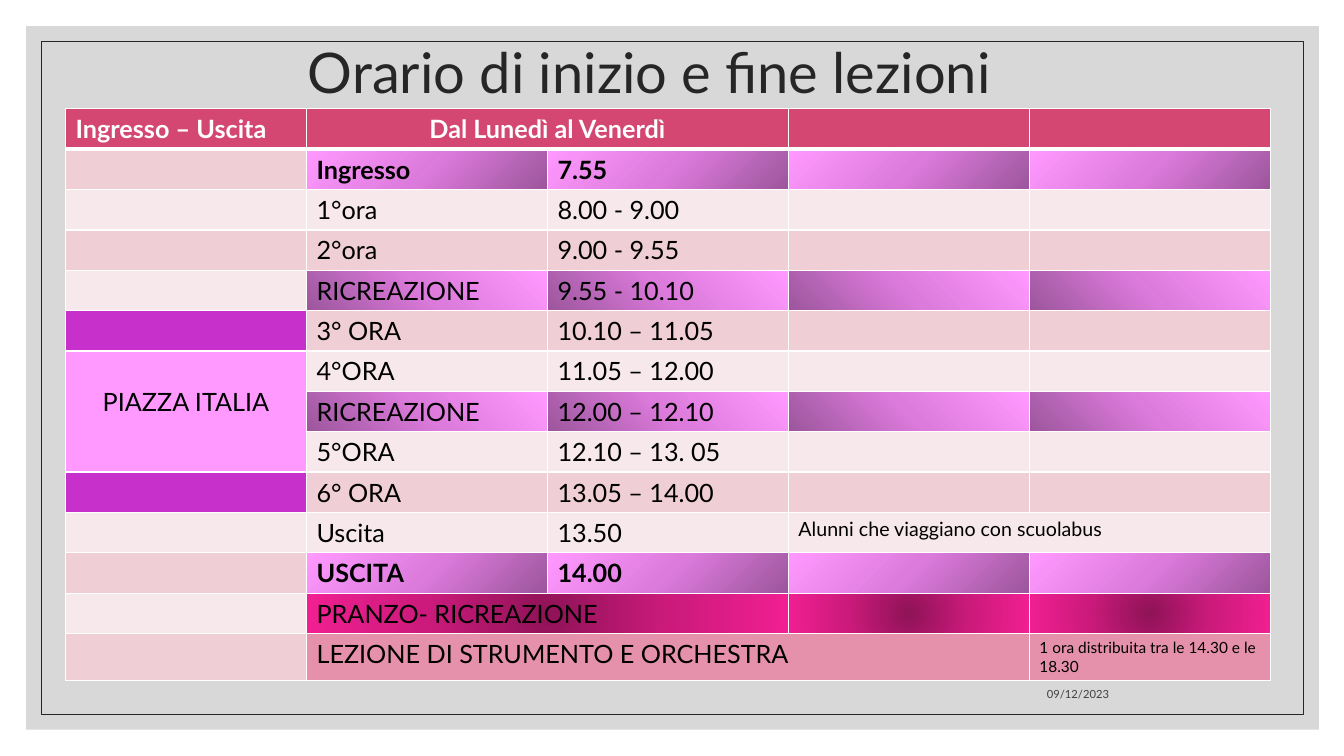
"""Build the school timetable slide with lesson start and end times."""
from lxml import etree
from pptx import Presentation
from pptx.dml.color import RGBColor
from pptx.enum.shapes import MSO_SHAPE
from pptx.enum.text import MSO_ANCHOR, PP_ALIGN
from pptx.oxml import parse_xml
from pptx.oxml.ns import qn
from pptx.util import Inches, Pt

RECTANGLE = MSO_SHAPE.RECTANGLE
LEFT, CENTER, RIGHT = PP_ALIGN.LEFT, PP_ALIGN.CENTER, PP_ALIGN.RIGHT
MIDDLE, BOTTOM = MSO_ANCHOR.MIDDLE, MSO_ANCHOR.BOTTOM
NAMESPACE = "http://schemas.openxmlformats.org/drawingml/2006/main"
FONT = "Lato"
BANDS = ["F7E9EB", "EFCFD5"]
HEADER, LESSON, VIOLET, PINK = "D54773", "E691AB", "C830CC", "FF99FF"
ORCHID = ["9C569C", "DD7BDD", "FF99FF"]
MAGENTA = ["8F1357", "CB1A7B", "F11F92"]


def color(value):
    return RGBColor.from_string(value)


def write(frame, text, size, tint, align=LEFT, bold=False):
    para = frame.paragraphs[0]
    para.text = text
    para.alignment = align
    para.font.name = FONT
    para.font.size = Pt(size)
    para.font.bold = bold
    para.font.color.rgb = color(tint)
    return para


deck = Presentation()
deck.slide_width, deck.slide_height = Inches(13.33), Inches(7.5)
page = deck.slides.add_slide(deck.slide_layouts[6])

panel = page.shapes.add_shape(RECTANGLE, Inches(0.26), Inches(0.26), Inches(12.82), Inches(6.98))
panel.shadow.inherit = False
panel.fill.solid()
panel.fill.fore_color.rgb = color("BFBFBF")
panel.line.fill.background()
panel_color = panel._element.spPr.find(qn("a:solidFill"))[0]
etree.SubElement(panel_color, qn("a:alpha"), val="60000")

frame_line = page.shapes.add_shape(RECTANGLE, Inches(0.41), Inches(0.41), Inches(12.52), Inches(6.68))
frame_line.shadow.inherit = False
frame_line.fill.background()
frame_line.line.color.rgb = color("262626")
frame_line.line.width = Pt(0.5)

title = page.shapes.add_textbox(Inches(0.94), Inches(0), Inches(11), Inches(1.5)).text_frame
title.word_wrap = True
title.vertical_anchor = MIDDLE
write(title, "Orario di inizio e fine lezioni", 40, "262626", CENTER).line_spacing = 0.9

date = page.shapes.add_textbox(Inches(7.94), Inches(6.6), Inches(3.16), Inches(0.4)).text_frame
date.word_wrap = True
date.vertical_anchor = BOTTOM
write(date, "09/12/2023", 8, "404040", RIGHT)

entries = [
    ["Ingresso – Uscita", "Dal Lunedì al Venerdì"],
    ["", "Ingresso", "7.55"],
    ["", "1°ora", "8.00 - 9.00"],
    ["", "2°ora", "9.00 - 9.55"],
    ["", "RICREAZIONE", "9.55 - 10.10"],
    ["", "3° ORA", "10.10 – 11.05"],
    ["PIAZZA ITALIA", "4°ORA", "11.05 – 12.00"],
    ["", "RICREAZIONE", "12.00 – 12.10"],
    ["", "5°ORA", "12.10 – 13. 05"],
    ["", "6° ORA", "13.05 – 14.00"],
    ["", "Uscita", "13.50", "Alunni che viaggiano con scuolabus"],
    ["", "USCITA", "14.00"],
    ["", "PRANZO- RICREAZIONE"],
    ["", "LEZIONE DI STRUMENTO E ORCHESTRA", "", "", "1 ora distribuita tra le 14.30 e le 18.30"],
]
first_fills = {0: HEADER, 5: VIOLET, 6: PINK, 7: PINK, 8: PINK, 9: VIOLET}
row_fills = {0: HEADER, 13: LESSON}
linear = '<a:lin ang="{}" scaled="0"/>'
radial = '<a:path path="circle"><a:fillToRect l="{}" t="{}" r="{}" b="{}"/></a:path>'
gradients = {
    1: (ORCHID, linear.format(225 * 60000)),
    4: (ORCHID, radial.format(0, 100000, 100000, 0)),
    7: (ORCHID, linear.format(315 * 60000)),
    11: (ORCHID, radial.format(100000, 100000, 0, 0)),
    12: (MAGENTA, radial.format(50000, 50000, 50000, 50000)),
}
sizes = {(10, 3): 14, (13, 4): 11}
centered = [(0, 1), (6, 0)]
bold_rows = [0, 1, 11]
merges = [(0, 1, 0, 2), (6, 0, 8, 0), (10, 3, 10, 4), (12, 1, 12, 2), (13, 1, 13, 3)]

holder = page.shapes.add_table(14, 5, Inches(0.65), Inches(1.08), Inches(11.96), Inches(5.67))
table = holder.table
table.first_row = False
table.horz_banding = False
for column in table.columns:
    column.width = Inches(2.39)
for number, row in enumerate(table.rows):
    row.height = Inches(0.46 if number == 13 else 0.4)
    for place, cell in enumerate(row.cells):
        texts = entries[number]
        write(cell.text_frame, texts[place] if place < len(texts) else "",
              sizes.get((number, place), 18), "000000" if number else "FFFFFF",
              CENTER if (number, place) in centered else LEFT, number in bold_rows)
        properties = cell._tc.get_or_add_tcPr()
        for side in "LRTB":
            heavy = (number, side) in [(0, "B"), (1, "T")]
            border = etree.SubElement(properties, qn("a:ln" + side), w=str(Pt(3 if heavy else 1)))
            paint = etree.SubElement(border, qn("a:solidFill"))
            etree.SubElement(paint, qn("a:srgbClr"), val="FFFFFF")
        if place and number in gradients:
            tints, direction = gradients[number]
            stops = "".join(f'<a:gs pos="{step * 50000}"><a:srgbClr val="{tint}"/></a:gs>'
                            for step, tint in enumerate(tints))
            properties.append(parse_xml(f'<a:gradFill xmlns:a="{NAMESPACE}" rotWithShape="1">'
                                        f'<a:gsLst>{stops}</a:gsLst>{direction}</a:gradFill>'))
        else:
            special = row_fills if place else first_fills
            cell.fill.solid()
            cell.fill.fore_color.rgb = color(special.get(number, BANDS[number % 2]))

for top, left, bottom, right in merges:
    table.cell(top, left).merge(table.cell(bottom, right))
table.cell(6, 0).margin_top = Inches(0.35)

deck.save("out.pptx")
